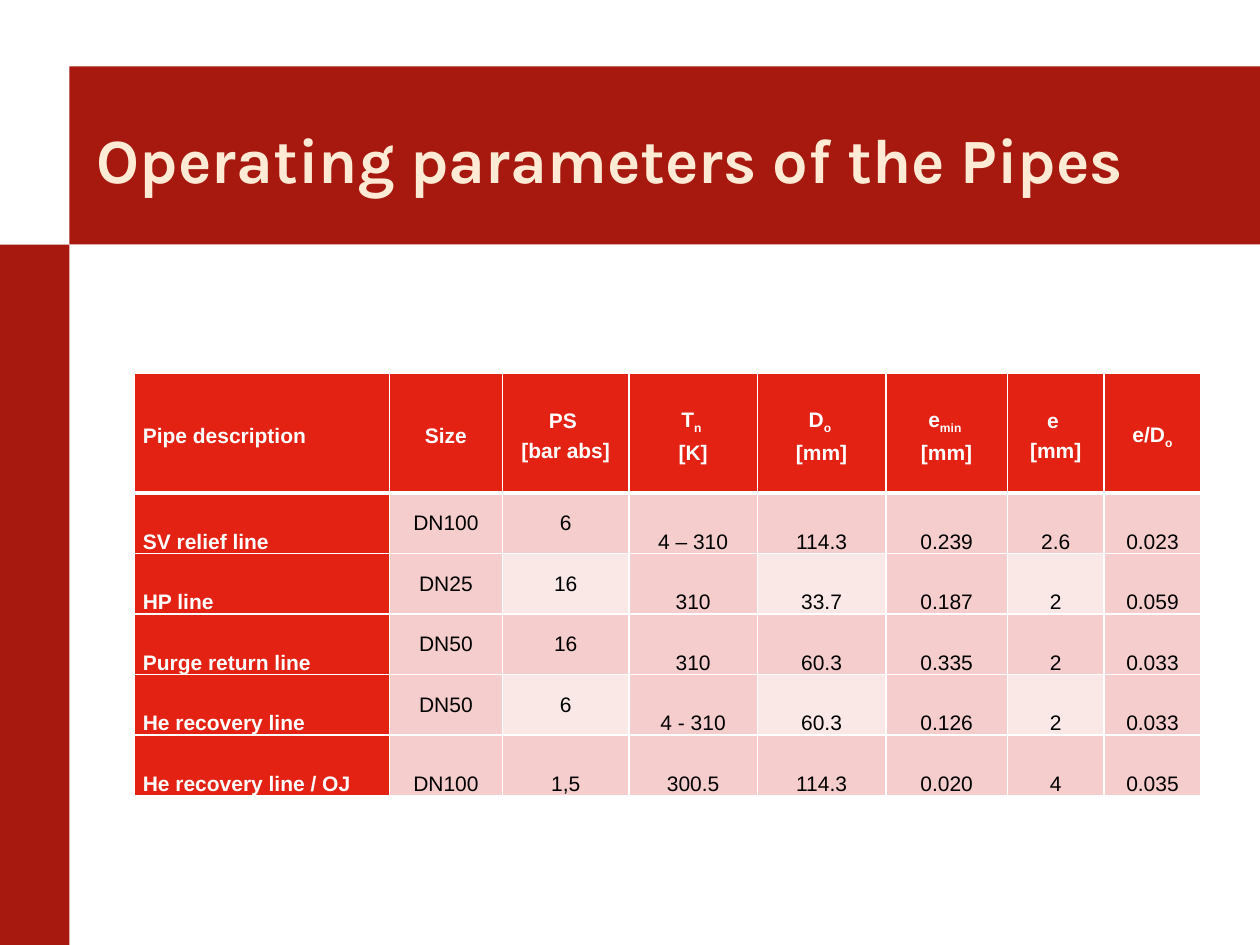
from copy import deepcopy

from lxml import etree
from pptx import Presentation
from pptx.dml.color import RGBColor
from pptx.enum.shapes import MSO_SHAPE
from pptx.enum.text import MSO_ANCHOR, MSO_AUTO_SIZE, PP_ALIGN
from pptx.oxml.ns import qn
from pptx.util import Cm, Pt

RECT = MSO_SHAPE.RECTANGLE
MID, LOW = MSO_ANCHOR.MIDDLE, MSO_ANCHOR.BOTTOM
LEFT, CENTER = PP_ALIGN.LEFT, PP_ALIGN.CENTER
HEX = {"bar": "A7190E", "title": "FFEBD5", "head": "E32213", "band": "F4CDCC",
       "pale": "FAE8E7", "white": "FFFFFF", "black": "000000"}
WIDE, HIGH = 25.4, 19.05
EDGE, TOP, BASE = 1.4, 1.34, 4.93  # band left, top and bottom

COLS = [5.15, 2.28, 2.55, 2.59, 2.59, 2.45, 1.95, 1.95]
HEAD, ROW = 2.41, 1.22
# name, subscript, unit
HEADS = [("Pipe description", "", ""), ("Size", "", ""),
         ("PS ", "", "[bar abs]"), ("T", "n ", "[K]"), ("D", "o ", "[mm]"),
         ("e", "min ", "[mm]"), ("e ", "", "[mm]"), ("e/D", "o", "")]
PIPES = [
    ["SV relief line", "DN100", "6", "4 – 310", "114.3", "0.239", "2.6", "0.023"],
    ["HP line", "DN25", "16", "310", "33.7", "0.187", "2", "0.059"],
    ["Purge return line", "DN50", "16", "310", "60.3", "0.335", "2", "0.033"],
    ["He recovery line", "DN50", "6", "4 - 310", "60.3", "0.126", "2", "0.033"],
    ["He recovery line / OJ", "DN100", "1,5", "300.5", "114.3", "0.020", "4", "0.035"],
]


def color(name):
    return RGBColor.from_string(HEX[name])


def style(font, form):
    for key, value in form.items():
        if key == "color":
            font.color.rgb = color(value)
        else:
            setattr(font, key, value)


def add_bar(slide, x, y, w, h):
    bar = slide.shapes.add_shape(RECT, Cm(x), Cm(y), Cm(w), Cm(h))
    bar.shadow.inherit = False
    bar.fill.solid()
    bar.fill.fore_color.rgb = color("bar")
    bar.line.fill.background()


def set_title(slide, x, y, w, h):
    title = slide.shapes.title
    slide.shapes._spTree.append(title._element)  # in front of the bars
    place = {"left": Cm(x), "top": Cm(y), "width": Cm(w), "height": Cm(h)}
    for key, value in place.items():
        setattr(title, key, value)
    frame = title.text_frame
    frame.text = "Operating parameters of the Pipes"
    frame.auto_size = MSO_AUTO_SIZE.NONE
    frame.vertical_anchor = MID
    line = frame.paragraphs[0]
    line.alignment = LEFT
    style(line.runs[0].font,
          {"name": "Karla", "size": Pt(36), "bold": True, "color": "title"})


def add_edges(cell, **widths):
    """Draw white cell borders, given as points for L, R, T and B."""
    props = cell._tc.get_or_add_tcPr()
    for side, width in widths.items():
        line = etree.SubElement(props, qn(f"a:ln{side}"), w=str(Pt(width)))
        fill = etree.SubElement(line, qn("a:solidFill"))
        etree.SubElement(fill, qn("a:srgbClr"), val=HEX["white"])


def fill_cell(cell, parts, shade, anchor, side, form):
    """Write name, subscript and unit, the unit on a line of its own."""
    cell.fill.solid()
    cell.fill.fore_color.rgb = color(shade)
    cell.vertical_anchor = anchor
    cell.margin_left = cell.margin_right = Cm(0.18)
    cell.margin_top = cell.margin_bottom = 0
    line = cell.text_frame.paragraphs[0]
    line.alignment = side
    name, sub, unit = parts
    for text in filter(None, parts):
        if text == unit:
            line.add_line_break()
        run = line.add_run()
        run.text = text
        style(run.font, form)
        props = run._r.get_or_add_rPr()
        if text == unit:
            run._r.getprevious().append(deepcopy(props))
        if text == sub:
            props.set("baseline", "-25000")
    return line


def add_table(slide, x, y):
    rows = len(PIPES) + 1
    table = slide.shapes.add_table(
        rows, len(COLS), Cm(x), Cm(y), Cm(sum(COLS)),
        Cm(HEAD + ROW * len(PIPES))).table
    for col, width in zip(table.columns, COLS):
        col.width = Cm(width)
    for i, row in enumerate(table.rows):
        row.height = Cm(ROW if i else HEAD)
    lines = [HEADS] + [[(text, "", "") for text in pipe] for pipe in PIPES]
    for r, line in enumerate(lines):
        for c, parts in enumerate(line):
            cell = table.cell(r, c)
            label = r == 0 or c == 0
            pale = r in (2, 4) and c in (2, 4, 6)
            shade = "head" if label else "pale" if pale else "band"
            upper = r == 0 or (c in (1, 2) and r < rows - 1)
            form = {"name": "Arial", "size": Pt(12), "bold": label,
                    "color": "white" if label else "black"}
            add_edges(cell, L=1, R=1, T=3 if r == 1 else 1, B=1 if r else 3)
            para = fill_cell(cell, parts, shade, MID if upper else LOW,
                             CENTER if c else LEFT, form)
            if r == 0:
                para.line_spacing = 1.25
                para.space_after = Pt(10)


def main():
    deck = Presentation()
    deck.slide_width, deck.slide_height = Cm(WIDE), Cm(HIGH)
    slide = deck.slides.add_slide(deck.slide_layouts[5])
    add_bar(slide, EDGE, TOP, WIDE - EDGE, BASE - TOP)
    add_bar(slide, 0, BASE, EDGE, HIGH - BASE)
    set_title(slide, 1.7, 1.75, 23.4, 2.87)
    add_table(slide, 2.7, 7.53)
    deck.save("out.pptx")


if __name__ == "__main__":
    main()
